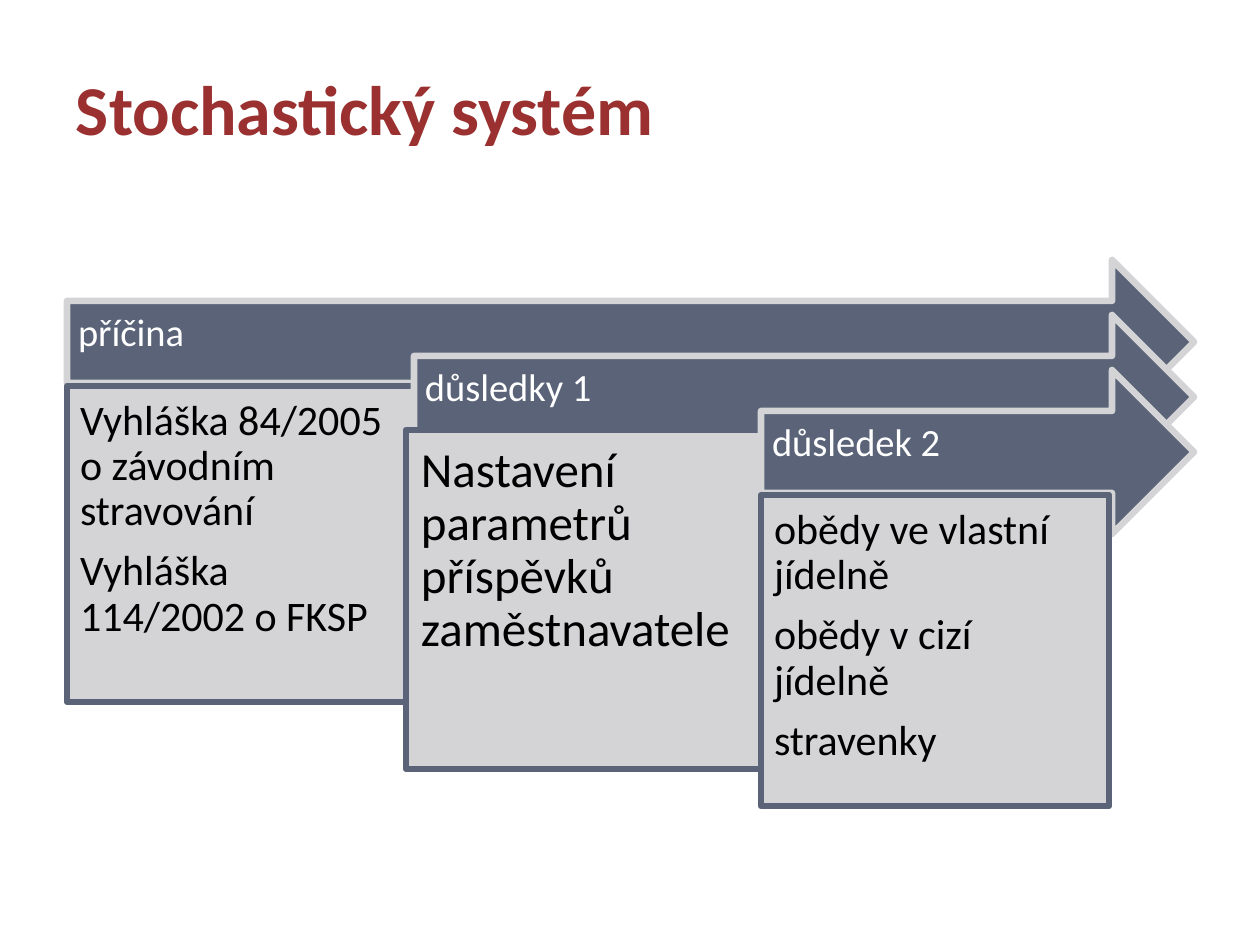
import pptx
import pptx.util
import pptx.dml.color
import pptx.enum.shapes
import pptx.enum.text

PX = 914400 / 126
FONT = "Calibri"
COLORS = {"title": "9A3130", "slate": "5A6378", "grey": "D4D4D6",
          "white": "FFFFFF", "black": "000000"}

# Diagram grid: each stage starts one step further right and down
ARROW_STEP_X, ARROW_STEP_Y, ARROW_HEIGHT = 347, 55, 164
STAGES = [
    # heading, card box relative to the diagram, text size, inset, items
    ("příčina", (0, 126, 348, 316), 24, 13,
     ["Vyhláška 84/2005 o závodním stravování", "Vyhláška 114/2002 o FKSP"]),
    ("důsledky 1", (339, 170, 364, 339), 28, 15,
     ["Nastavení parametrů příspěvků zaměstnavatele"]),
    ("důsledek 2", (694, 235, 348, 311), 24, 13,
     ["obědy ve vlastní jídelně", "obědy v cizí jídelně", "stravenky"]),
]


def px(length):
    return pptx.util.Emu(round(length * PX))


def rgb(name):
    return pptx.dml.color.RGBColor.from_string(COLORS[name])


def set_frame(frame, insets, anchor):
    frame.word_wrap = True
    frame.auto_size = pptx.enum.text.MSO_AUTO_SIZE.NONE
    frame.vertical_anchor = anchor
    (frame.margin_left, frame.margin_top,
     frame.margin_right, frame.margin_bottom) = map(px, insets)


def add_span(para, text, size, color, bold=False):
    para.alignment = pptx.enum.text.PP_ALIGN.LEFT
    span = para.add_run()
    span.text = text
    span.font.name = FONT
    span.font.size = pptx.util.Pt(size)
    span.font.bold = bold
    span.font.color.rgb = rgb(color)


def add_panel(page, kind, box, fill, line, size, color, items, insets, anchor):
    panel = page.shapes.add_shape(kind, *map(px, box))
    panel.shadow.inherit = False
    panel.fill.solid()
    panel.fill.fore_color.rgb = rgb(fill)
    panel.line.color.rgb = rgb(line)
    panel.line.width = pptx.util.Pt(3.78)
    frame = panel.text_frame
    set_frame(frame, insets, anchor)
    for index, text in enumerate(items):
        para = frame.add_paragraph() if index else frame.paragraphs[0]
        para.line_spacing = 0.9
        if index:
            para.space_before = pptx.util.Pt(round(size * 0.35, 1))
        add_span(para, text, size, color)


def add_title(page, box, text):
    title = page.shapes.title
    title.left, title.top, title.width, title.height = map(px, box)
    set_frame(title.text_frame, (13, 6, 6, 6),
              pptx.enum.text.MSO_ANCHOR.MIDDLE)
    add_span(title.text_frame.paragraphs[0], text, 40, "title", bold=True)


def add_stages(page, box):
    left, top, width, _ = box
    kinds = pptx.enum.shapes.MSO_SHAPE
    anchors = pptx.enum.text.MSO_ANCHOR
    for index, (heading, card, size, inset, items) in enumerate(STAGES):
        # Arrow: all of them end at the right edge of the diagram
        shift = index * ARROW_STEP_X
        arrow_box = (left + shift, top + index * ARROW_STEP_Y,
                     width - shift, ARROW_HEIGHT)
        add_panel(page, kinds.RIGHT_ARROW, arrow_box, "slate", "grey",
                  22, "white", [heading], (11, 11, 35, 26), anchors.MIDDLE)
        # Card below the arrow
        x, y, card_width, card_height = card
        add_panel(page, kinds.RECTANGLE,
                  (left + x, top + y, card_width, card_height),
                  "grey", "slate", size, "black", items,
                  (inset,) * 4, anchors.TOP)


def main():
    deck = pptx.Presentation()
    deck.slide_width, deck.slide_height = px(1260), px(945)
    page = deck.slides.add_slide(deck.slide_layouts[5])
    add_title(page, (63, 21, 1134, 173), "Stochastický systém")
    add_stages(page, (67, 260, 1127, 546))
    deck.save("out.pptx")


if __name__ == "__main__":
    main()
